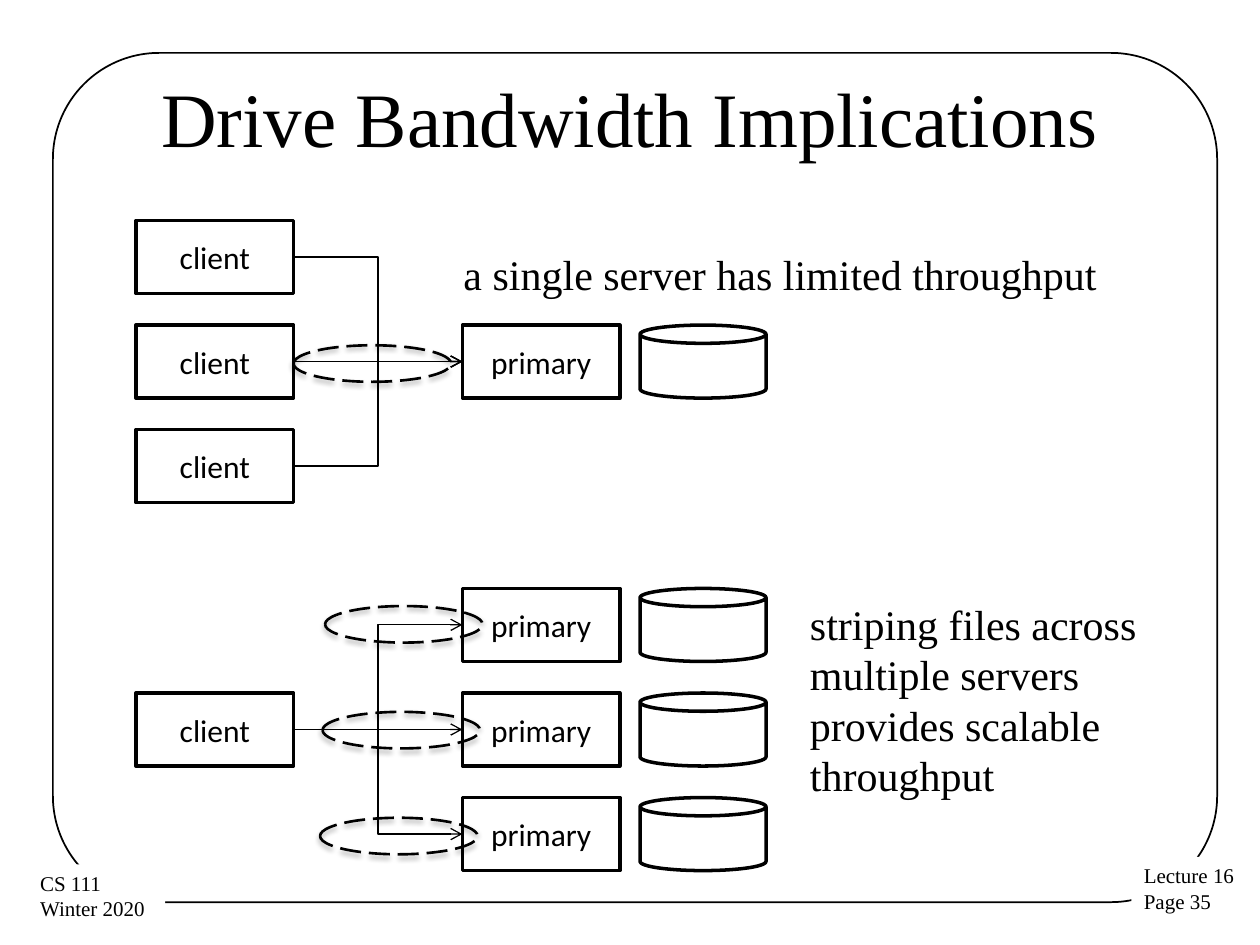
from lxml.etree import SubElement
from pptx import Presentation
from pptx.dml.color import RGBColor
from pptx.enum.dml import MSO_LINE
from pptx.enum.shapes import MSO_CONNECTOR, MSO_SHAPE
from pptx.enum.text import MSO_ANCHOR, PP_ALIGN
from pptx.oxml import parse_xml
from pptx.oxml.ns import nsdecls, qn
from pptx.util import Inches, Pt

BLACK = RGBColor(0x00, 0x00, 0x00)
WHITE = RGBColor(0xFF, 0xFF, 0xFF)
SERIF = "Times New Roman"
SANS = "Calibri"

SHADOW = (
    f'<a:effectLst {nsdecls("a")}>'
    f'<a:outerShdw blurRad="{Pt(3.1)}" dist="{Pt(1.8)}" dir="5400000" rotWithShape="0">'
    '<a:srgbClr val="000000"><a:alpha val="35000"/></a:srgbClr>'
    "</a:outerShdw></a:effectLst>"
)

# Diagram grid
CLIENT_X, SERVER_X, DISK_X = 1.08, 3.67, 5.08
BOX_W, DISK_W, BOX_H = 1.25, 1, 0.58
ROW_STEP = 0.83
SINGLE_TOP, STRIPED_TOP = 1.75, 4.67


class Diagram:
    """Holds the style and the current slide."""

    def __init__(self, slide):
        self.slide = slide
        self.shapes = slide.shapes

    def style_text(self, frame, size, font, align=PP_ALIGN.LEFT):
        for paragraph in frame.paragraphs:
            paragraph.alignment = align
            for run in paragraph.runs:
                run.font.size = Pt(size)
                run.font.name = font
                run.font.color.rgb = BLACK

    def outline(self, kind, x, y, w, h, weight):
        shape = self.shapes.add_shape(kind, Inches(x), Inches(y), Inches(w), Inches(h))
        shape.shadow.inherit = False
        shape.fill.background()
        shape.line.color.rgb = BLACK
        shape.line.width = Pt(weight)
        return shape

    def title(self, text):
        title = self.shapes.title
        title.left, title.top = Inches(0.5), Inches(0.3)
        title.width, title.height = Inches(9), Inches(1.25)
        title.text_frame.text = text
        title.text_frame.vertical_anchor = MSO_ANCHOR.MIDDLE
        self.style_text(title.text_frame, 44, SERIF, PP_ALIGN.CENTER)
        # Bring the title in front of the page frame
        self.shapes.element.append(title.element)

    def text(self, text, x, y, w, h, size=24, wrap=True):
        box = self.shapes.add_textbox(Inches(x), Inches(y), Inches(w), Inches(h))
        box.text_frame.word_wrap = wrap
        box.text_frame.text = text
        self.style_text(box.text_frame, size, SERIF)
        return box

    def corner_note(self, text, x, y, w):
        note = self.text(text, x, y, w, 0.51, size=12, wrap=False)
        note.fill.solid()
        note.fill.fore_color.rgb = WHITE

    def node(self, label, x, y):
        node = self.outline(MSO_SHAPE.RECTANGLE, x, y, BOX_W, BOX_H, 2)
        node.text_frame.text = label
        node.text_frame.vertical_anchor = MSO_ANCHOR.MIDDLE
        self.style_text(node.text_frame, 18, SANS, PP_ALIGN.CENTER)
        return node

    def client(self, y):
        return self.node("client", CLIENT_X, y)

    def server(self, y):
        self.outline(MSO_SHAPE.CAN, DISK_X, y, DISK_W, BOX_H, 2)
        return self.node("primary", SERVER_X, y)

    def arrow(self, client, server):
        level = client.top == server.top
        kind = MSO_CONNECTOR.STRAIGHT if level else MSO_CONNECTOR.ELBOW
        arrow = self.shapes.add_connector(kind, 0, 0, 0, 0)
        arrow.begin_connect(client, 3)
        arrow.end_connect(server, 1)
        arrow.line.color.rgb = BLACK
        arrow.line.width = Pt(0.75)
        SubElement(arrow.line._get_or_add_ln(), qn("a:tailEnd"), type="arrow")
        SubElement(arrow.element.spPr, qn("a:effectLst"))

    def highlight(self, x, y):
        ring = self.outline(MSO_SHAPE.OVAL, x, y, 1.25, 0.29, 1.5)
        ring.line.dash_style = MSO_LINE.LONG_DASH
        properties = ring.element.spPr
        properties.replace(properties.find(qn("a:effectLst")), parse_xml(SHADOW))


def main():
    prs = Presentation()
    prs.slide_width, prs.slide_height = Inches(10), Inches(7.5)
    diagram = Diagram(prs.slides.add_slide(prs.slide_layouts[5]))

    # Page frame, corner notes and title
    frame = diagram.outline(MSO_SHAPE.ROUNDED_RECTANGLE, 0.42, 0.42, 9.24, 6.74, 1)
    frame.adjustments[0] = 0.125
    diagram.corner_note("Lecture 16\nPage 35", 8.98, 6.8, 0.93)
    diagram.corner_note("CS 111\nWinter 2020", 0.22, 6.86, 1.09)
    diagram.title("Drive Bandwidth Implications")

    # Three clients share one server
    single_rows = [SINGLE_TOP + i * ROW_STEP for i in range(3)]
    single_server = diagram.server(single_rows[1])
    for y in single_rows:
        diagram.arrow(diagram.client(y), single_server)
    diagram.text("a single server has limited throughput", 3.58, 1.92, 5.67, 0.5)

    # One client stripes across three servers
    striped_rows = [STRIPED_TOP + i * ROW_STEP for i in range(3)]
    striping_client = diagram.client(striped_rows[1])
    for y in striped_rows:
        diagram.arrow(striping_client, diagram.server(y))
    diagram.text(
        "striping files across multiple servers provides scalable throughput",
        6.33, 4.7, 3.25, 1.72,
    )

    # Rings around the network bottlenecks
    diagram.highlight(2.33, 2.74)
    for i in range(3):
        diagram.highlight(2.58 - i * 0.02, 4.81 + i * 0.84)

    prs.save("out.pptx")


if __name__ == "__main__":
    main()
